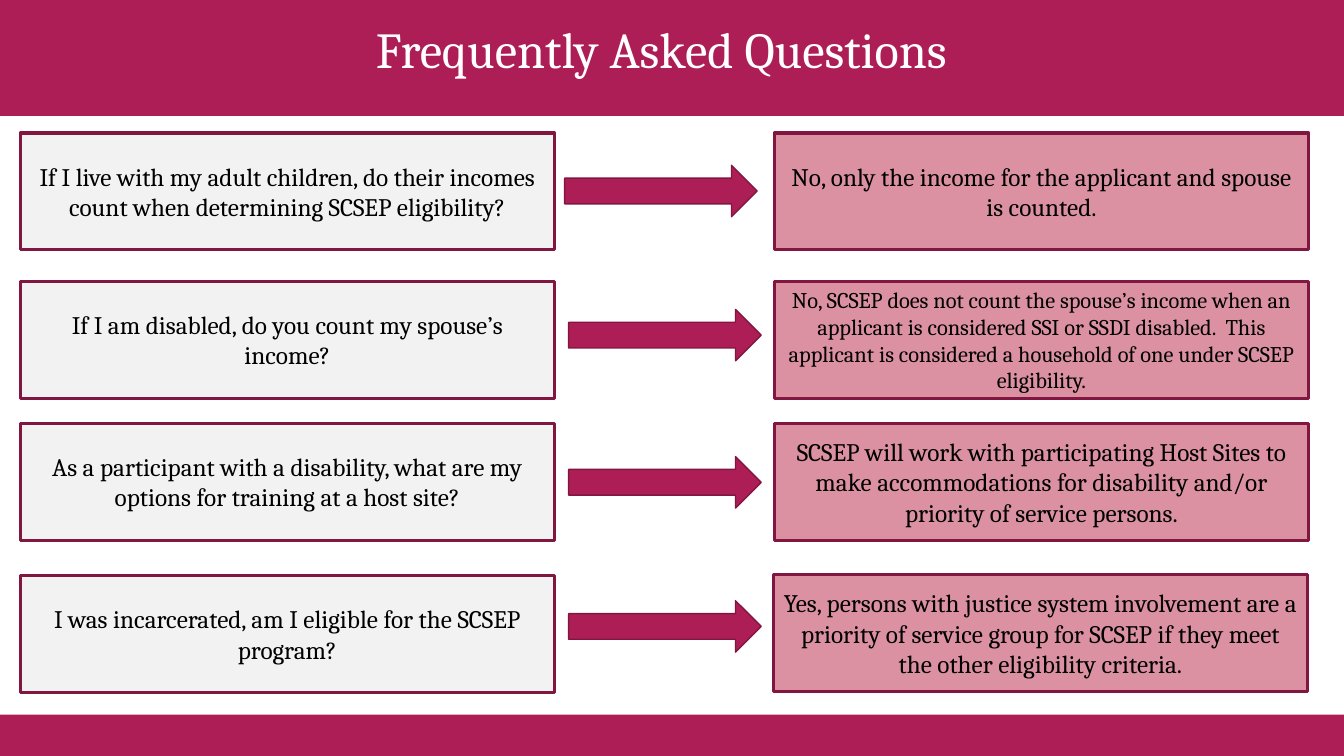
import pptx
import pptx.dml.color
import pptx.enum.shapes
import pptx.enum.text
import pptx.util

RGBColor = pptx.dml.color.RGBColor
Shape = pptx.enum.shapes.MSO_SHAPE

MAGENTA = RGBColor(0xAE, 0x1E, 0x56)
PLUM = RGBColor(0x81, 0x16, 0x40)
GREY = RGBColor(0xF2, 0xF2, 0xF2)
PINK = RGBColor(0xDC, 0x91, 0xA2)
WHITE = RGBColor(0xFF, 0xFF, 0xFF)
BLACK = RGBColor(0, 0, 0)

PX = 9144  # 100 px to the inch
WIDTH, HEIGHT = 1333, 750
BOX_WIDTH, BOX_HEIGHT = 530, 116
ARROW_WIDTH, ARROW_HEIGHT = 191, 51
QUESTION_LEFT = 20

# question, answer, answer size, (question, arrow, answer) tops, (arrow, answer) lefts
ROWS = [
    ("If I live with my adult children, do their incomes count when "
     "determining SCSEP eligibility?",
     "No, only the income for the applicant and spouse is counted.",
     18, (132, 164, 132), (560, 768)),
    ("If I am disabled, do you count my spouse’s income?",
     "No, SCSEP does not count the spouse’s income when an applicant is "
     "considered SSI or SSDI disabled.  This applicant is considered a "
     "household of one under SCSEP eligibility.",
     16, (279, 307, 279), (564, 768)),
    ("As a participant with a disability, what are my options for training "
     "at a host site?",
     "SCSEP will work with participating Host Sites to make accommodations "
     "for disability and/or priority of service persons.",
     18, (420, 453, 420), (564, 768)),
    ("I was incarcerated, am I eligible for the SCSEP program?",
     "Yes, persons with justice system involvement are a priority of service "
     "group for SCSEP if they meet the other eligibility criteria.",
     18, (571, 596, 570), (564, 767)),
]


class SlideBuilder:
    font = "Cambria"

    def __init__(self, page):
        self.page = page

    def area(self, *lengths):
        return [pptx.util.Emu(length * PX) for length in lengths]

    def set_text(self, frame, text, size, color):
        frame.word_wrap = True
        para = frame.paragraphs[0]
        para.text = text
        para.alignment = pptx.enum.text.PP_ALIGN.CENTER
        para.font.name = self.font
        para.font.size = pptx.util.Pt(size)
        para.font.color.rgb = color

    def shape(self, kind, left, top, width, height, fill, line_width=0):
        shape = self.page.shapes.add_shape(kind, *self.area(left, top, width, height))
        shape.shadow.inherit = False
        shape.fill.solid()
        shape.fill.fore_color.rgb = fill
        if line_width:
            shape.line.color.rgb = PLUM
            shape.line.width = pptx.util.Pt(line_width)
        else:
            shape.line.fill.background()
        return shape

    def band(self, top, height):
        self.shape(Shape.RECTANGLE, 0, top, WIDTH, height, MAGENTA)

    def box(self, left, top, text, size, fill):
        box = self.shape(Shape.RECTANGLE, left, top, BOX_WIDTH, BOX_HEIGHT, fill, 2.25)
        box.text_frame.vertical_anchor = pptx.enum.text.MSO_ANCHOR.MIDDLE
        self.set_text(box.text_frame, text, size, BLACK)

    def arrow(self, left, top):
        self.shape(Shape.RIGHT_ARROW, left, top, ARROW_WIDTH, ARROW_HEIGHT, MAGENTA, 1)

    def title(self, left, top, width, height, text):
        title = self.page.shapes.add_textbox(*self.area(left, top, width, height))
        self.set_text(title.text_frame, text, 36, WHITE)


def main():
    deck = pptx.Presentation()
    deck.slide_width = pptx.util.Emu(WIDTH * PX)
    deck.slide_height = pptx.util.Emu(HEIGHT * PX)
    builder = SlideBuilder(deck.slides.add_slide(deck.slide_layouts[6]))

    # Header and footer
    builder.band(0, 115)
    builder.band(709, 41)
    builder.title(299, 13, 714, 101, "Frequently Asked Questions")

    # Questions, arrows and answers
    for question, answer, size, tops, lefts in ROWS:
        question_top, arrow_top, answer_top = tops
        arrow_left, answer_left = lefts
        builder.box(QUESTION_LEFT, question_top, question, 18, GREY)
        builder.arrow(arrow_left, arrow_top)
        builder.box(answer_left, answer_top, answer, size, PINK)

    deck.save("out.pptx")


if __name__ == "__main__":
    main()
